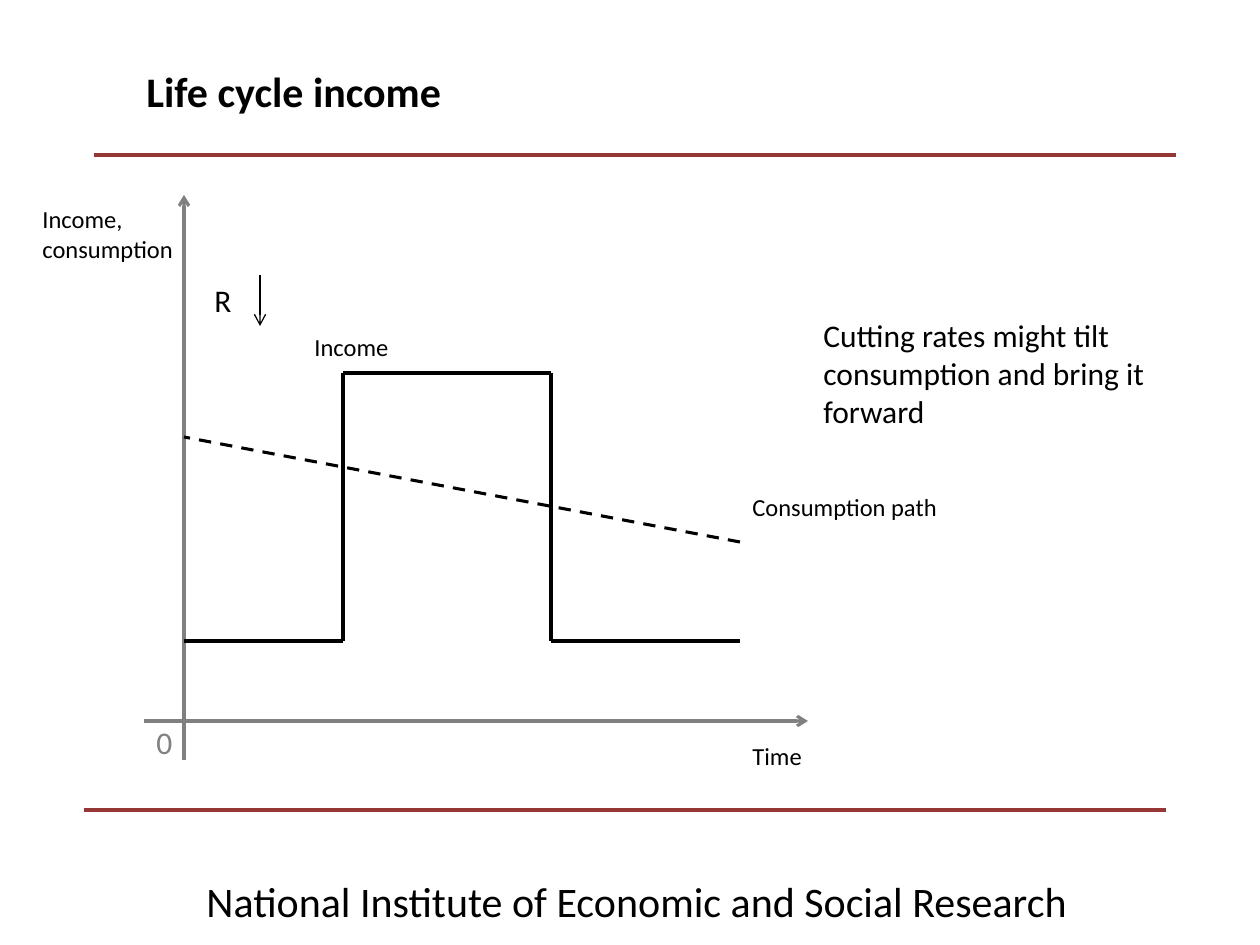
from lxml import etree
from pptx import Presentation
from pptx.dml.color import RGBColor
from pptx.enum.dml import MSO_LINE
from pptx.enum.shapes import MSO_CONNECTOR
from pptx.oxml.ns import qn
from pptx.util import Pt

PX = 914400 / 126
STRAIGHT = MSO_CONNECTOR.STRAIGHT
DASH = MSO_LINE.DASH
BLACK, GREY, RED = "000000", "808080", "953735"
FONT = "Calibri"


def emu(*px):
    return [round(n * PX) for n in px]


def rgb(code):
    return RGBColor.from_string(code)


def add_line(slide, start, end, color=BLACK, width=1.75, dash=None, arrow=False):
    """Draw a straight line; an arrow points at its end."""
    line = slide.shapes.add_connector(STRAIGHT, *emu(*start, *end))
    line.line.color.rgb = rgb(color)
    line.line.width = Pt(width)
    if dash:
        line.line.dash_style = dash
    if arrow:
        etree.SubElement(line.line._get_or_add_ln(), qn("a:tailEnd"), type="arrow")
    etree.SubElement(line._element.spPr, qn("a:effectLst"))


def add_path(slide, points):
    """Join the points in turn with separate lines."""
    for start, end in zip(points, points[1:]):
        add_line(slide, start, end)


def add_text(slide, text, box, size=14, color=BLACK, bold=False):
    frame = slide.shapes.add_textbox(*emu(*box)).text_frame
    frame.word_wrap = True
    frame.text = text
    for para in frame.paragraphs:
        font = para.font
        font.name, font.size, font.bold = FONT, Pt(size), bold
        font.color.rgb = rgb(color)


def add_frame(slide):
    """Draw the title, the two rules and the footer."""
    for left, top in ((94, 155), (84, 810)):
        add_line(slide, (left, top), (left + 1082, top), RED, 2.25)
    add_text(slide, "Life cycle income", (134, 59, 1012, 63), 24, bold=True)
    add_text(slide, "National Institute of Economic and Social Research",
             (194, 869, 1002, 50), 24)


def add_graph(slide):
    left, right, low, high = 184, 740, 641, 373
    rise, fall = 343, 551
    add_line(slide, (left, 760), (left, 195), GREY, arrow=True)
    add_line(slide, (144, 721), (808, 721), GREY, arrow=True)
    add_path(slide, [(left, low), (rise, low), (rise, high),
                     (fall, high), (fall, low), (right, low)])
    add_line(slide, (right, 542), (left, 437), dash=DASH)
    add_line(slide, (260, 275), (260, 326), width=0.75, arrow=True)

    add_text(slide, "Income,\nconsumption", (30, 198, 198, 72))
    add_text(slide, "Time", (right, 735, 169, 81))
    add_text(slide, "Consumption path", (right, 486, 248, 43))
    add_text(slide, "Income", (302, 326, 248, 43))
    add_text(slide, "0", (144, 717, 169, 50), 18, GREY)
    add_text(slide, "R", (202, 275, 72, 50), 18)


def main():
    deck = Presentation()
    deck.slide_width, deck.slide_height = emu(1260, 945)
    slide = deck.slides.add_slide(deck.slide_layouts[6])
    add_frame(slide)
    add_graph(slide)
    add_text(slide, "Cutting rates might tilt consumption and bring it forward",
             (811, 310, 436, 127), 18)
    deck.save("out.pptx")


if __name__ == "__main__":
    main()
